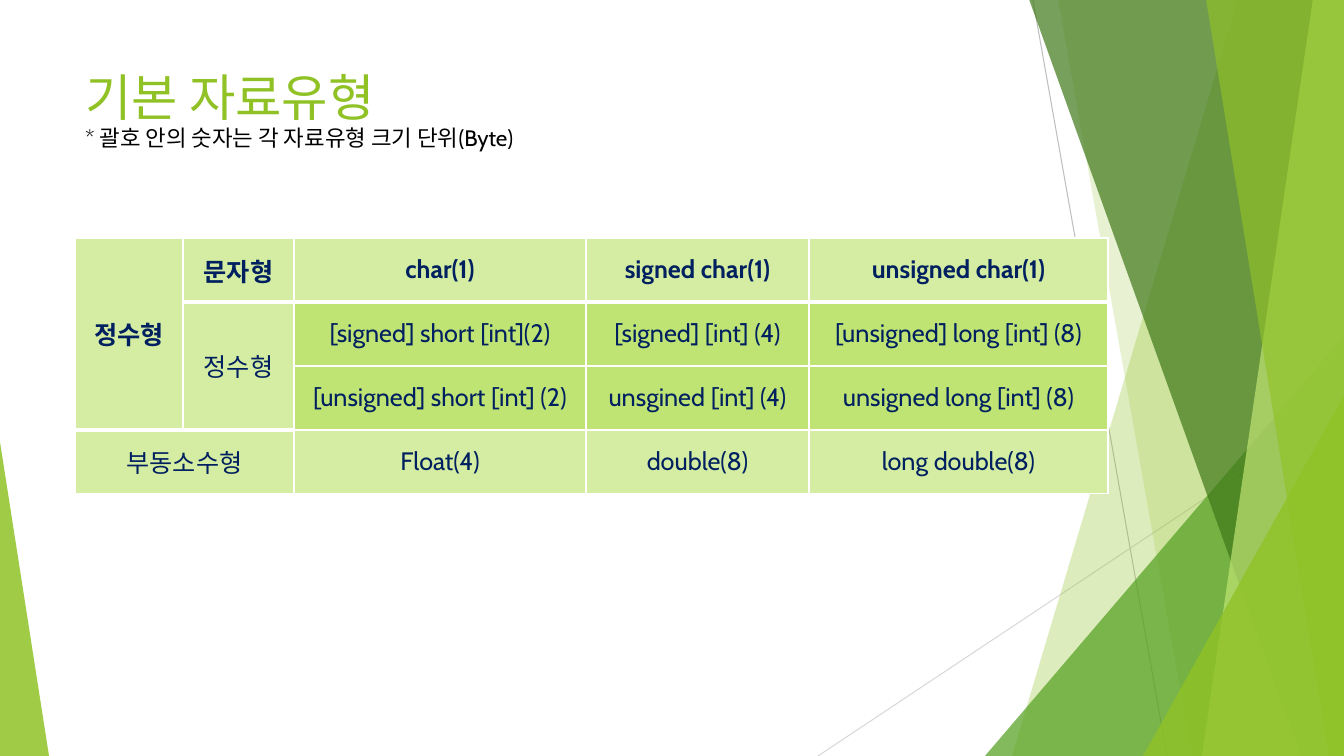
import pptx
import pptx.util
import pptx.dml.color
import pptx.enum.shapes
import pptx.enum.text
import pptx.oxml
import pptx.oxml.ns

# Content
FONT = "Cabin"
GREEN, PALE, LIME, NAVY = "90C226", "D5EDA2", "C0E474", "002060"
TITLE = "기본 자료유형"
SUBTITLE = "* 괄호 안의 숫자는 각 자료유형 크기 단위(Byte)"
TYPES = [
    ["정수형", "문자형", "char(1)", "signed char(1)", "unsigned char(1)"],
    ["", "정수형", "[signed] short [int](2)", "[signed] [int] (4)", "[unsigned] long [int] (8)"],
    ["", "", "[unsigned] short [int] (2)", "unsgined [int] (4)", "unsigned long [int] (8)"],
    ["부동소수형", "", "Float(4)", "double(8)", "long double(8)"],
]
MERGES = [((0, 0), (2, 0)), ((1, 1), (2, 1)), ((3, 0), (3, 1))]

# Geometry in px
WIDTH, HEIGHT = 1344, 756
PX = 914400 / 100.8
TITLE_BOX = (75, 68, 948, 145)
TABLE_LEFT, TABLE_TOP, ROW_HEIGHT = 75, 238, 64
COLUMNS = [108, 111, 292, 223, 299]
RAYS = [((1033, 0), (1167, HEIGHT), "BFBFBF"), ((WIDTH, 406), (818, HEIGHT), "D9D9D9")]
# Band: x at top left, x at bottom left; each reaches the right edge
# Triangle: left, top, width, apex position
FACETS = [
    ("band", (1238, 1012), GREEN, 30),
    ("band", (1058, 1192), GREEN, 20),
    ("triangle", (985, 336, 359, 1), "54A021", 72),
    ("band", (1029, 1301), "3F7819", 70),
    ("band", (1313, 1202), LIME, 70),
    ("band", (1206, 1329), GREEN, 65),
    ("triangle", (1143, 396, 201, 1), GREEN, 80),
    ("triangle", (0, 442, 49, 0), GREEN, 85),
]


def emu(*lengths):
    return [pptx.util.Emu(round(length * PX)) for length in lengths]


def color(value):
    return pptx.dml.color.RGBColor.from_string(value)


def child(parent, tag, **attributes):
    element = pptx.oxml.ns.qn(tag)
    node = parent.makeelement(element, attributes)
    parent.append(node)
    return node


def add_text(paragraph, text, size, ink, bold=False):
    run = paragraph.add_run()
    run.text = text
    run.font.name = FONT
    run.font.size = pptx.util.Pt(size)
    run.font.bold = bold
    run.font.color.rgb = color(ink)


def add_ray(slide, start, end, ink):
    ray = slide.shapes.add_connector(
        pptx.enum.shapes.MSO_CONNECTOR.STRAIGHT, *emu(*start, *end))
    ray.line.color.rgb = color(ink)
    ray.line.width = pptx.util.Pt(0.75)
    child(ray._element.spPr, "a:effectLst")


def add_facet(slide, kind, outline, ink, opacity):
    if kind == "band":
        top_x, bottom_x = outline
        builder = slide.shapes.build_freeform(top_x, -1, scale=PX)
        builder.add_line_segments([(WIDTH, -1), (WIDTH, HEIGHT), (bottom_x, HEIGHT)])
        facet = builder.convert_to_shape()
    else:
        left, top, width, apex = outline
        facet = slide.shapes.add_shape(
            pptx.enum.shapes.MSO_SHAPE.ISOSCELES_TRIANGLE,
            *emu(left, top, width, HEIGHT - top))
        facet.adjustments[0] = apex
    facet.shadow.inherit = False
    facet.line.fill.background()
    facet.fill.solid()
    facet.fill.fore_color.rgb = color(ink)
    fill = facet._element.spPr.find(pptx.oxml.ns.qn("a:solidFill"))
    child(fill[0], "a:alpha", val=str(opacity * 1000))


def set_borders(cell, bottom):
    properties = cell._tc.get_or_add_tcPr()
    widths = {"a:lnL": 1, "a:lnR": 1, "a:lnT": 1, "a:lnB": bottom}
    for place, (side, width) in enumerate(widths.items()):
        border = child(properties, side, w=str(pptx.util.Pt(width)))
        child(child(border, "a:solidFill"), "a:srgbClr", val="FFFFFF")
        properties.insert(place, border)


def add_types(slide):
    frame = slide.shapes.add_table(
        len(TYPES), len(COLUMNS),
        *emu(TABLE_LEFT, TABLE_TOP, sum(COLUMNS), ROW_HEIGHT * len(TYPES)))
    table = frame.table
    for column, width in zip(table.columns, COLUMNS):
        column.width = emu(width)[0]
    for row in table.rows:
        row.height = emu(ROW_HEIGHT)[0]
    for first, last in MERGES:
        table.cell(*first).merge(table.cell(*last))
    for r, names in enumerate(TYPES):
        for c, name in enumerate(names):
            cell = table.cell(r, c)
            cell.fill.solid()
            cell.fill.fore_color.rgb = color(LIME if r in (1, 2) and c > 1 else PALE)
            cell.vertical_anchor = pptx.enum.text.MSO_ANCHOR.MIDDLE
            set_borders(cell, 3 if r == 0 or (r, c) == (2, 0) else 1)
            if name:
                paragraph = cell.text_frame.paragraphs[0]
                paragraph.alignment = pptx.enum.text.PP_ALIGN.CENTER
                add_text(paragraph, name, 18, NAVY, bold=r == 0)


def main():
    deck = pptx.Presentation()
    deck.slide_width, deck.slide_height = emu(WIDTH, HEIGHT)
    slide = deck.slides.add_slide(deck.slide_layouts[5])

    # Background rays and facets
    for ray in RAYS:
        add_ray(slide, *ray)
    for facet in FACETS:
        add_facet(slide, *facet)

    # Title with its note on the unit
    title = slide.shapes.title
    title.left, title.top, title.width, title.height = emu(*TITLE_BOX)
    title.text_frame.word_wrap = True
    title.text_frame.auto_size = pptx.enum.text.MSO_AUTO_SIZE.NONE
    title.text_frame.vertical_anchor = pptx.enum.text.MSO_ANCHOR.TOP
    heading = title.text_frame.paragraphs[0]
    heading.alignment = pptx.enum.text.PP_ALIGN.LEFT
    heading.line_spacing = 0.9
    add_text(heading, TITLE, 36, GREEN)
    heading.add_line_break()
    add_text(heading, SUBTITLE, 16, "000000")

    # Table of data types
    add_types(slide)
    deck.save("out.pptx")


if __name__ == "__main__":
    main()
